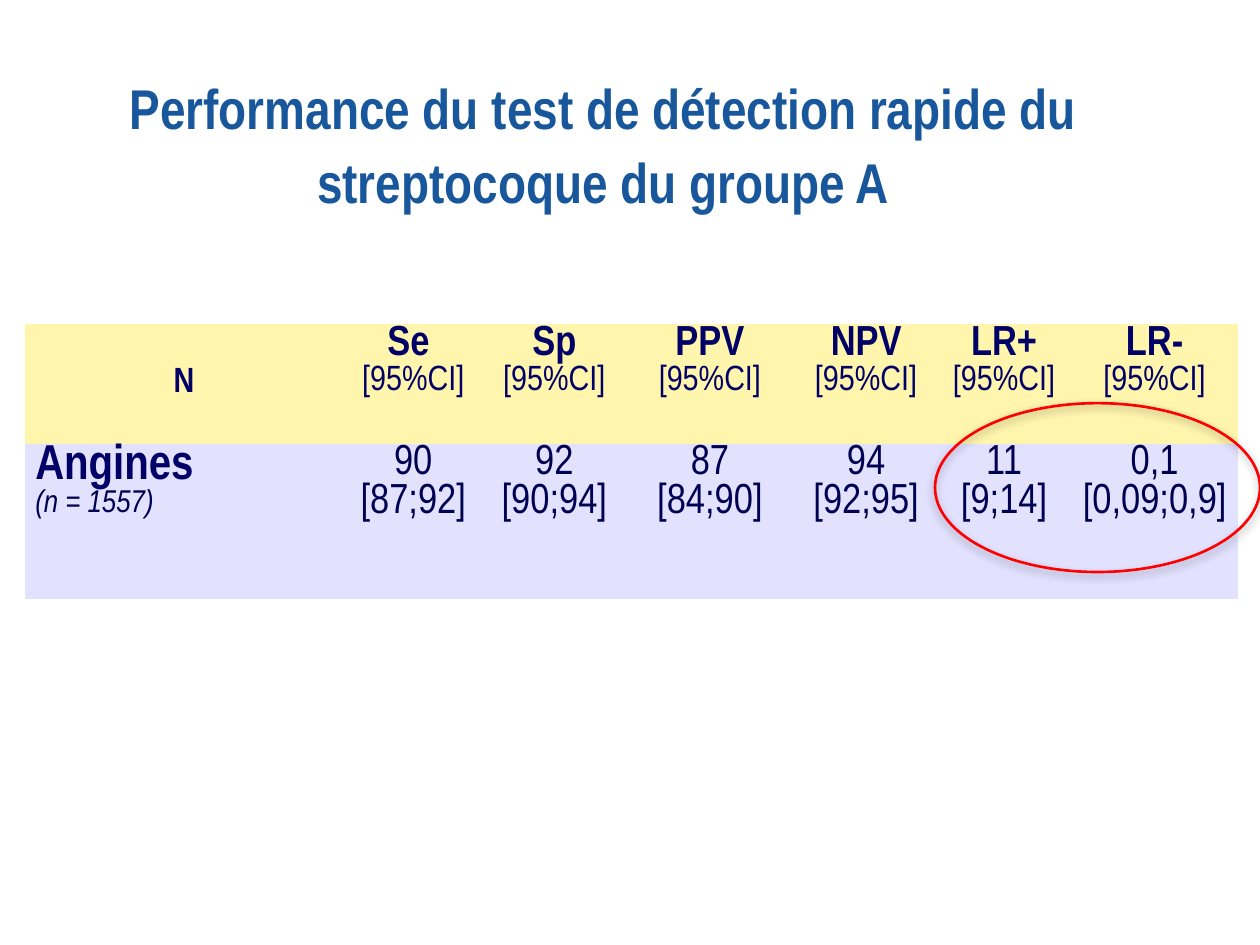
from lxml.etree import SubElement
from pptx import Presentation
from pptx.dml.color import RGBColor
from pptx.enum.shapes import MSO_SHAPE
from pptx.enum.text import MSO_ANCHOR as ANCHOR, MSO_AUTO_SIZE, PP_ALIGN as ALIGN
from pptx.oxml.ns import qn
from pptx.util import Inches, Pt

TITLE = "Performance du test de détection rapide du streptocoque du groupe A"
MEASURES = [
    ("Se ", "90", "[87;92]"),
    ("Sp", "92", "[90;94]"),
    ("PPV", "87", "[84;90]"),
    ("NPV", "94", "[92;95]"),
    ("LR+", "11", "[9;14]"),
    ("LR-", "0,1", "[0,09;0,9]"),
]
COLUMN_WIDTHS = [2.52, 1.12, 1.12, 1.35, 1.13, 1.06, 1.33]
ROW_HEIGHTS = [0.95, 1.23]
ROW_FILLS = ["FFF5AD", "E2E2FF"]
FONT = "Arial Narrow"
BLUE, NAVY, DARK_NAVY, RED = "18579B", "000066", "000052", "FF0000"
NO_STYLE = "{2D5ABB26-0587-4C30-8999-92F81FD0307C}"


def rgb(color):
    return RGBColor.from_string(color)


def add_text(paragraph, text, size, color, bold=False, italic=False):
    run = paragraph.add_run()
    run.text = text
    font = run.font
    font.name, font.size, font.bold, font.italic = FONT, Pt(size), bold, italic
    font.color.rgb = rgb(color)


def fill_cell(cell, lines, align=ALIGN.CENTER, top=0):
    """Write one paragraph per (text, size, color, bold, italic) line."""
    cell.margin_left = cell.margin_right = Inches(0.08)
    cell.margin_top, cell.margin_bottom = Inches(top), 0
    frame = cell.text_frame
    for index, line in enumerate(lines):
        paragraph = frame.add_paragraph() if index else frame.paragraphs[0]
        paragraph.alignment = align
        add_text(paragraph, *line)


def add_soft_shadow(shape):
    shape.shadow.inherit = False
    effects = shape._element.spPr.find(qn("a:effectLst"))
    shadow = SubElement(effects, qn("a:outerShdw"), blurRad=str(Pt(5)),
                        dist=str(Pt(1.8)), dir="5400000", rotWithShape="0")
    black = SubElement(shadow, qn("a:srgbClr"), val="000000")
    SubElement(black, qn("a:alpha"), val="35000")


deck = Presentation()
deck.slide_width, deck.slide_height = Inches(10), Inches(7.5)
slide = deck.slides.add_slide(deck.slide_layouts[5])

title = slide.shapes.title
title.left, title.top = Inches(-0.21), Inches(0.33)
title.width, title.height = Inches(10), Inches(1.58)
title_frame = title.text_frame
title_frame.auto_size = MSO_AUTO_SIZE.NONE
title_frame.vertical_anchor = ANCHOR.MIDDLE
heading = title_frame.paragraphs[0]
heading.alignment = ALIGN.CENTER
heading.line_spacing = 1.1
add_text(heading, TITLE, 32, BLUE, True)

table = slide.shapes.add_table(
    len(ROW_HEIGHTS), len(COLUMN_WIDTHS), Inches(0.2), Inches(2.57),
    Inches(sum(COLUMN_WIDTHS)), Inches(sum(ROW_HEIGHTS))).table
table.first_row = table.horz_banding = False
table._tbl.tblPr.find(qn("a:tableStyleId")).text = NO_STYLE
for column, width in zip(table.columns, COLUMN_WIDTHS):
    column.width = Inches(width)
for row, height, fill in zip(table.rows, ROW_HEIGHTS, ROW_FILLS):
    row.height = Inches(height)
    for cell in row.cells:
        cell.fill.solid()
        cell.fill.fore_color.rgb = rgb(fill)

fill_cell(table.cell(0, 0), [("N", 20, NAVY, True)])
table.cell(0, 0).vertical_anchor = ANCHOR.MIDDLE
fill_cell(table.cell(1, 0), [("Angines", 28, NAVY, True),
                             ("(n = 1557)", 18, DARK_NAVY, False, True)], ALIGN.LEFT)
for col, (measure, value, interval) in enumerate(MEASURES, start=1):
    fill_cell(table.cell(0, col), [(measure, 24, NAVY, True),
                                   ("[95%CI]", 20, NAVY)], top=0.01)
    fill_cell(table.cell(1, col), [(value, 24, DARK_NAVY), (interval, 24, DARK_NAVY)])

ratio_ring = slide.shapes.add_shape(
    MSO_SHAPE.OVAL, Inches(8.04), Inches(2.58), Inches(1.34), Inches(2.58))
ratio_ring.rotation = 90
ratio_ring.fill.background()
ratio_ring.line.color.rgb = rgb(RED)
ratio_ring.line.width = Pt(1.5)
add_soft_shadow(ratio_ring)

deck.save("out.pptx")
